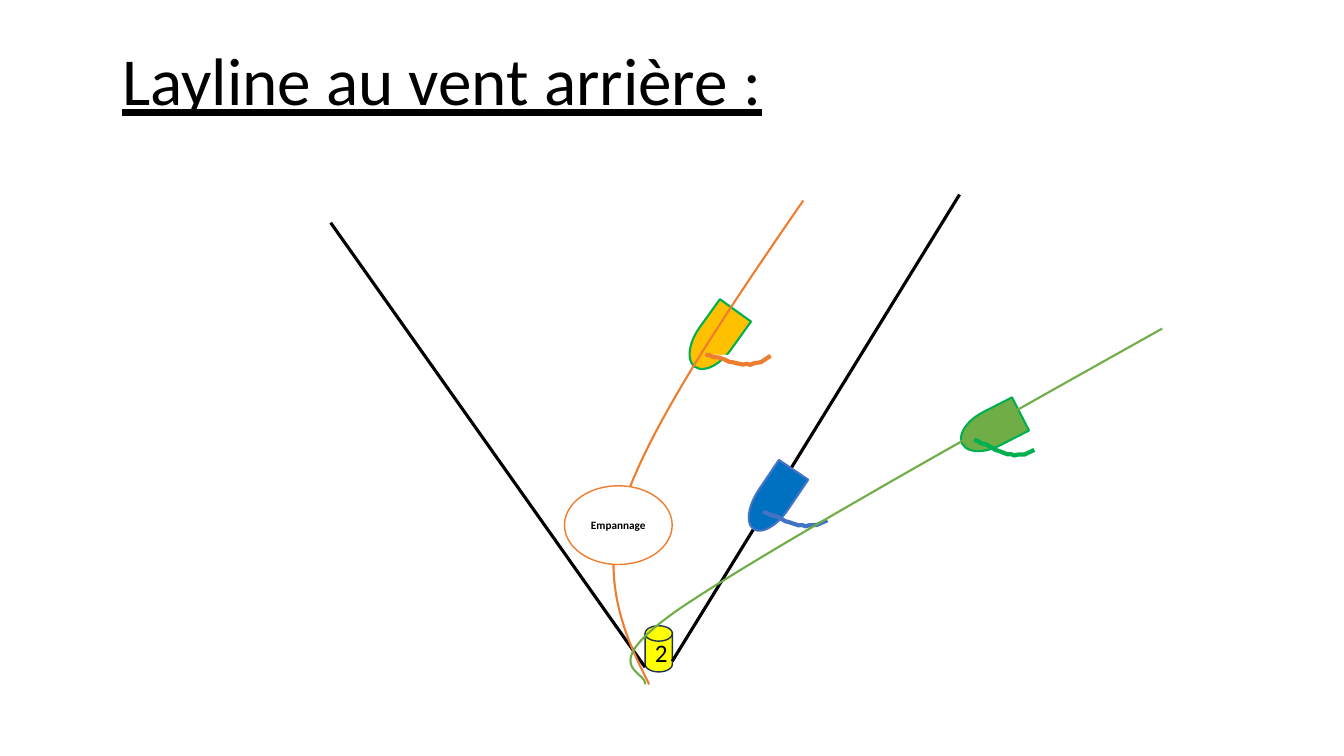
import pptx
import pptx.util
import pptx.dml.color
import pptx.enum.shapes
import pptx.enum.text
import lxml.etree

Pt = pptx.util.Pt
KIND = pptx.enum.shapes.MSO_SHAPE
TEXT = pptx.enum.text
HUES = {
    "black": "000000", "white": "FFFFFF", "yellow": "FFFF00", "navy": "1E3256",
    "blue": "0070C0", "sky": "4472C4", "green": "70AD47", "lime": "00B050",
    "gold": "FFC000", "orange": "ED7D31",
}


def paint(shape, fill, line, width):
    """Set fill and outline, without shadow."""
    shape.shadow.inherit = False
    if fill:
        shape.fill.solid()
        shape.fill.fore_color.rgb = pptx.dml.color.RGBColor.from_string(HUES[fill])
    else:
        shape.fill.background()
    shape.line.color.rgb = pptx.dml.color.RGBColor.from_string(HUES[line])
    shape.line.width = Pt(width)


def write(shape, text, size, align):
    """Set one line of black Calibri and return its run font."""
    shape.text_frame.text = text
    para = shape.text_frame.paragraphs[0]
    para.alignment = align
    font = para.runs[0].font
    font.name = "Calibri"
    font.size = Pt(size)
    font.color.rgb = pptx.dml.color.RGBColor.from_string(HUES["black"])
    return font


deck = pptx.Presentation()
deck.slide_width, deck.slide_height = Pt(960), Pt(540)
slide = deck.slides.add_slide(deck.slide_layouts[5])
shapes = slide.shapes

# Title
title = shapes.title
title.left, title.top, title.width, title.height = Pt(80), Pt(-58.5), Pt(563), Pt(211.5)
write(title, "Layline au vent arrière\u00a0:".replace("\u00a0", chr(160)), 48,
      TEXT.PP_ALIGN.LEFT).underline = True
frame = title.text_frame
frame.auto_size = TEXT.MSO_AUTO_SIZE.NONE
frame.vertical_anchor = TEXT.MSO_ANCHOR.BOTTOM
frame.margin_bottom = Pt(67)
frame.paragraphs[0].line_spacing = 0.9

# Buoy
buoy = shapes.add_shape(KIND.FLOWCHART_MAGNETIC_DISK, Pt(460.8), Pt(447), Pt(19.5), Pt(33))
paint(buoy, "yellow", "navy", 1)
write(buoy, "2", 18, TEXT.PP_ALIGN.CENTER)
buoy.text_frame.vertical_anchor = TEXT.MSO_ANCHOR.MIDDLE

# Laylines
for ends in [(480.2, 472.3, 685.4, 139), (460.8, 476.6, 236.2, 159.1)]:
    lay = shapes.add_connector(pptx.enum.shapes.MSO_CONNECTOR.STRAIGHT, *map(Pt, ends))
    lay.line.color.rgb = pptx.dml.color.RGBColor.from_string(HUES["black"])
    lay.line.width = Pt(2.25)
    lxml.etree.SubElement(lay._element.spPr, pptx.oxml.ns.qn("a:effectLst"))

# Boats: hull box, hull turn, fill, edge, sail box, sail turn, sail fill, sail line
SAIL = [(0, 0), (.06, .08), (.1, .18), (.19, .28), (.27, .44), (.31, .54), (.36, .6),
        (.46, .75), (.5, .81), (.57, .85), (.61, .92), (.68, .93), (.8, 1), (1, .96)]
BOATS = [
    ((527, 344.2, 51.1, 25.2), 124, "blue", "sky",
     (547.2, 358.6, 41.8, 20.9), 341.8, None, "sky"),
    ((684.7, 293, 46.8, 26.6), 152.9, "green", "lime",
     (698.4, 307.4, 38.2, 21.6), 341, None, "lime"),
    ((486, 228.2, 49.7, 27.4), 125.7, "gold", "lime",
     (506.9, 242.6, 41, 23), 332.8, "white", "orange"),
]
for hull, turn, fill, edge, box, tilt, cloth, hue in BOATS:
    group = shapes.add_group_shape()
    body = group.shapes.add_shape(KIND.FLOWCHART_DELAY, *map(Pt, hull))
    paint(body, fill, edge, 1.5)
    body.rotation = turn
    left, top, wide, high = box
    spots = [(Pt(left + u * wide), Pt(top + v * high)) for u, v in SAIL]
    pen = group.shapes.build_freeform(*spots[0])
    pen.add_line_segments(spots[1:], close=False)
    sail = pen.convert_to_shape()
    paint(sail, cloth, hue, 3)
    sail.rotation = tilt

# Courses: chained cubic curves, each sampled in equal steps
STEPS = 24
COURSES = [
    ("orange", [(573.8, 143.3), (517.7, 224.6), (462.2, 306.7), (444.2, 364.3),
                (425.5, 421.9), (455.8, 471.6), (463.7, 488.9)]),
    ("green", [(830.2, 234.7), (689, 313.9), (547.2, 393.1), (485.3, 434.9),
               (424.1, 477.4), (462.2, 478.8), (460.8, 488.9)]),
]
for hue, knots in COURSES:
    spots = []
    for first in range(0, len(knots) - 1, 3):
        for step in range(1, STEPS + 1):
            t = step / STEPS
            parts = ((1 - t) ** 3, 3 * t * (1 - t) ** 2, 3 * t * t * (1 - t), t ** 3)
            quad = knots[first:first + 4]
            spots.append(tuple(Pt(sum(w * k[axis] for w, k in zip(parts, quad)))
                               for axis in (0, 1)))
    pen = shapes.build_freeform(*map(Pt, knots[0]))
    pen.add_line_segments(spots, close=False)
    paint(pen.convert_to_shape(), None, hue, 1.5)

# Gybe mark
gybe = shapes.add_shape(KIND.OVAL, Pt(403.2), Pt(347), Pt(77), Pt(56.2))
paint(gybe, "white", "orange", 1)
write(gybe, "Empannage", 8, TEXT.PP_ALIGN.CENTER).bold = True
gybe.text_frame.vertical_anchor = TEXT.MSO_ANCHOR.MIDDLE
gybe.text_frame.margin_left = gybe.text_frame.margin_right = 0

deck.save("out.pptx")
